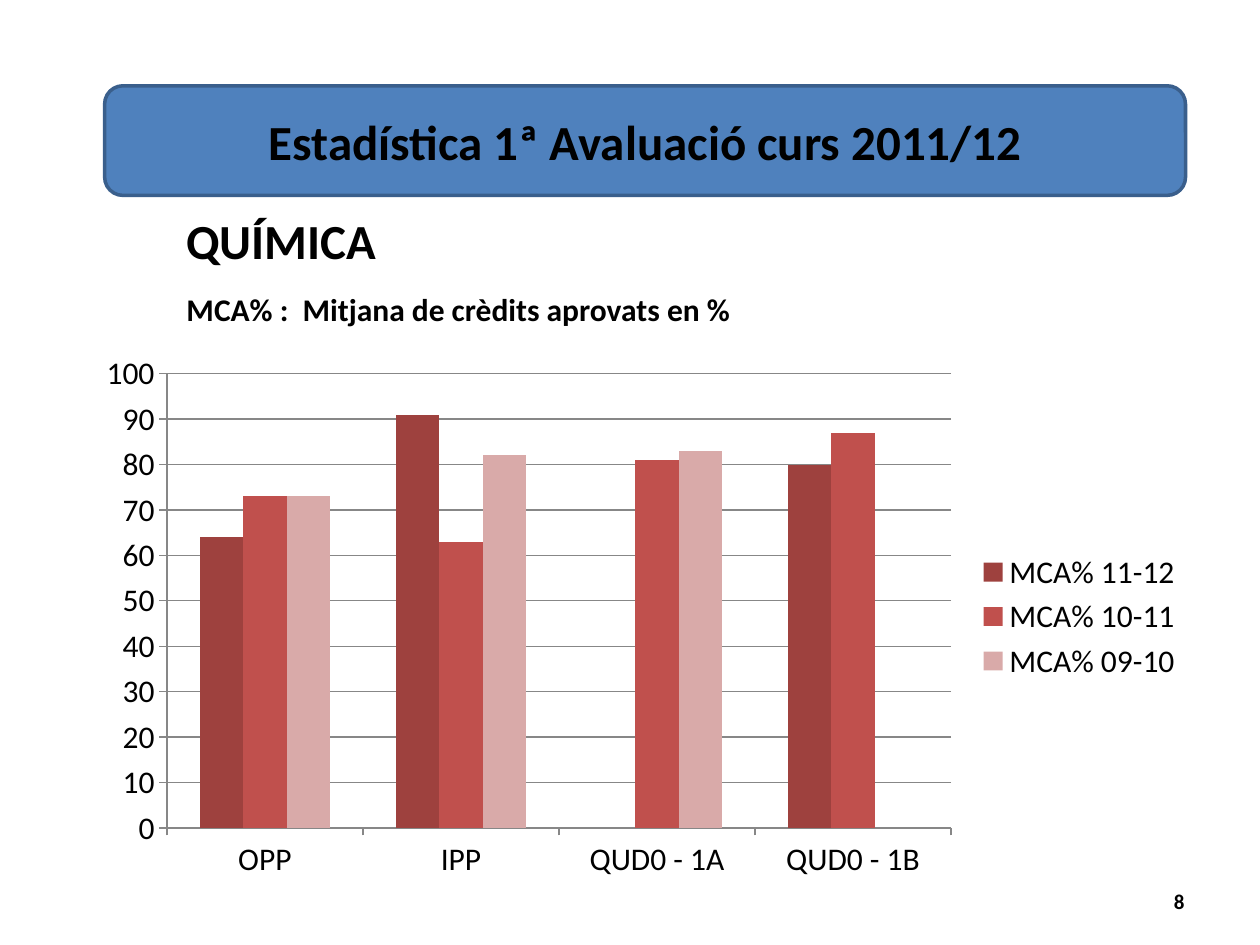
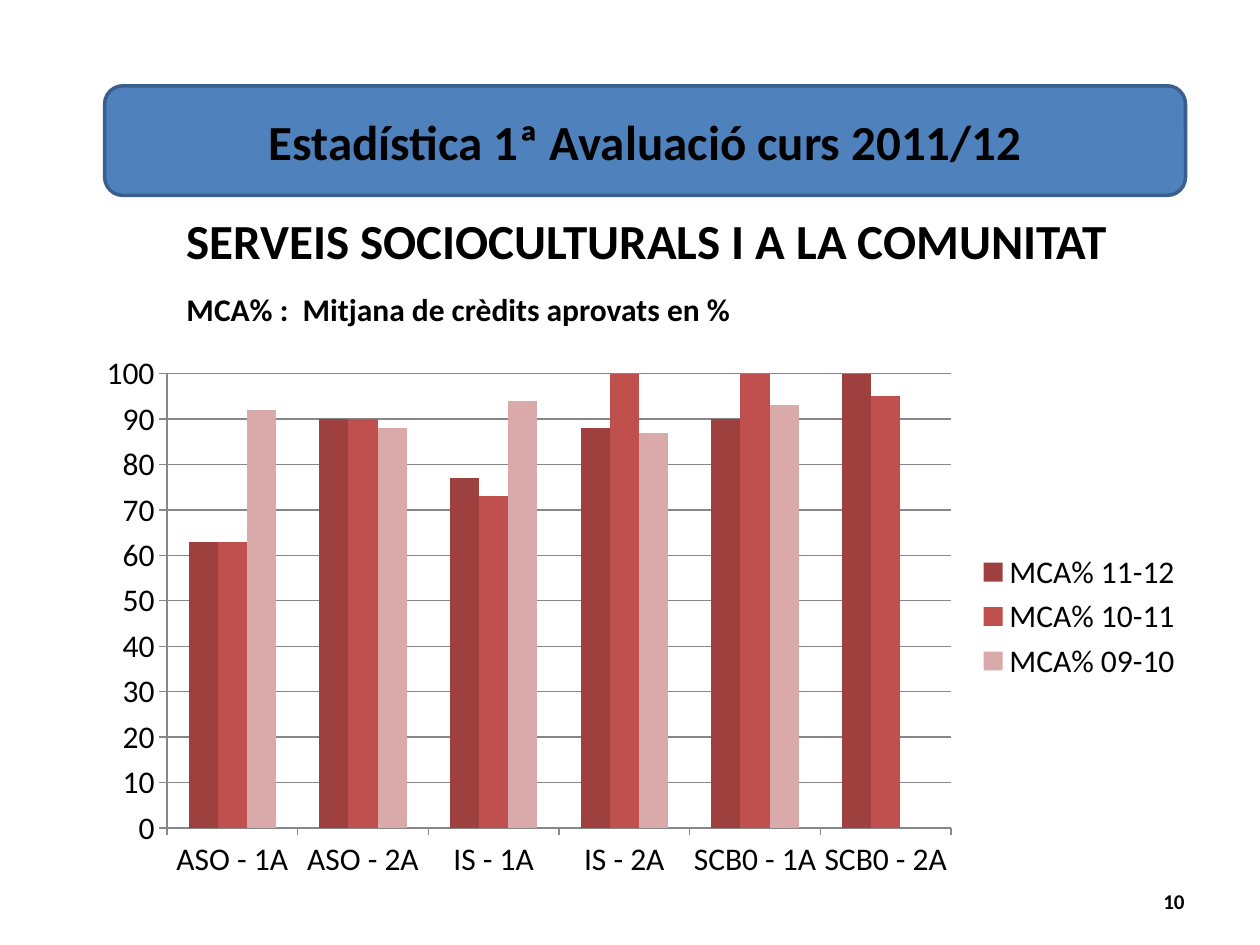
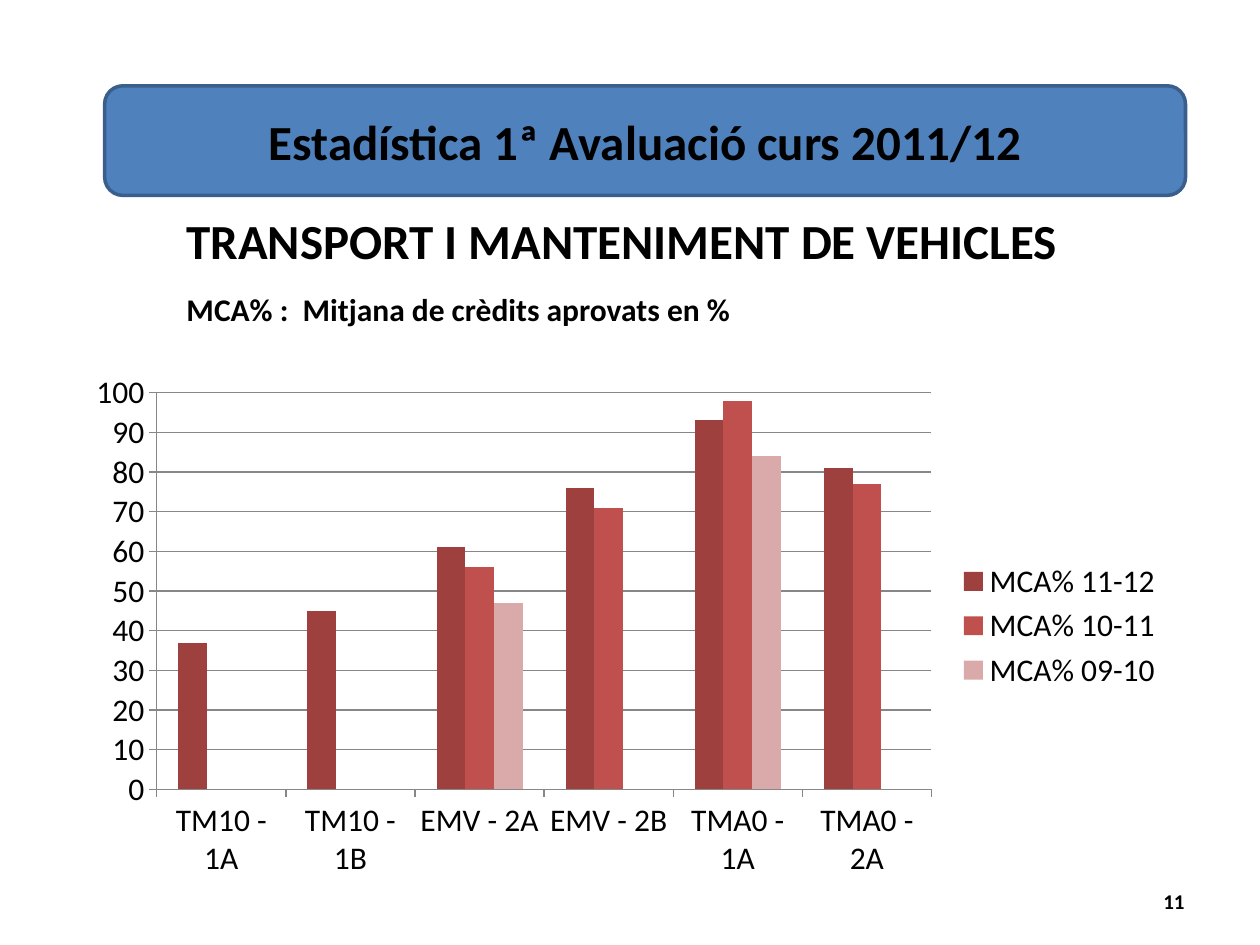
from dataclasses import dataclass

from pptx import Presentation
from pptx.chart.data import CategoryChartData
from pptx.dml.color import RGBColor
from pptx.enum.chart import XL_CHART_TYPE, XL_LEGEND_POSITION, XL_TICK_MARK
from pptx.enum.shapes import MSO_SHAPE
from pptx.enum.text import MSO_ANCHOR, MSO_AUTO_SIZE, PP_ALIGN
from pptx.util import Cm, Pt


@dataclass(frozen=True)
class Theme:
    font: str = "Calibri"
    ink: str = "000000"
    band: str = "4F81BD"
    edge: str = "3A5F8C"
    grid: str = "878787"
    bars: tuple = ("9E413E", "C0504D", "D9AAA9")
    head: int = 28
    body: int = 18
    foot: int = 12


THEME = Theme()
TITLE = "Estadística 1ª Avaluació curs 2011/12"
LABEL = "MCA% :  Mitjana de crèdits aprovats en %"
YEARS = ("MCA% 11-12", "MCA% 10-11", "MCA% 09-10")

# Chart places in cm: left, top, width, height
HIGH = (1.7, 6.93, 22.4, 11)
LOW = (1.5, 7.32, 22.2, 10.59)

# Page number, subject, its width in cm, chart place, values of each group by year
PAGES = (
    (8, "QUÍMICA", 4.39, HIGH, {
        "OPP": (64, 73, 73),
        "IPP": (91, 63, 82),
        "QUD0 - 1A": (None, 81, 83),
        "QUD0 - 1B": (80, 87, None),
    }),
    (10, "SERVEIS SOCIOCULTURALS I A LA COMUNITAT", 19.3, HIGH, {
        "ASO - 1A": (63, 63, 92),
        "ASO - 2A": (90, 90, 88),
        "IS - 1A": (77, 73, 94),
        "IS - 2A": (88, 100, 87),
        "SCB0 - 1A": (90, 100, 93),
        "SCB0 - 2A": (100, 95, None),
    }),
    (11, "TRANSPORT I MANTENIMENT DE VEHICLES", 18.26, LOW, {
        "TM10 - 1A": (37, None, None),
        "TM10 - 1B": (45, None, None),
        "EMV - 2A": (61, 56, 47),
        "EMV - 2B": (76, 71, None),
        "TMA0 - 1A": (93, 98, 84),
        "TMA0 - 2A": (81, 77, None),
    }),
)


def color(code):
    return RGBColor.from_string(code)


def style(font, size, bold=False):
    font.name = THEME.font
    font.size = Pt(size)
    font.bold = bold
    font.color.rgb = color(THEME.ink)


def write(shape, text, size=THEME.body, align=PP_ALIGN.LEFT,
          anchor=MSO_ANCHOR.TOP, wrap=True, grow=False):
    """Put one bold line of text into a shape."""
    frame = shape.text_frame
    frame.word_wrap = wrap
    frame.vertical_anchor = anchor
    if grow:
        frame.auto_size = MSO_AUTO_SIZE.SHAPE_TO_FIT_TEXT
    line = frame.paragraphs[0]
    line.alignment = align
    run = line.add_run()
    run.text = text
    style(run.font, size, bold=True)


class Deck:
    def __init__(self, theme):
        self.theme = theme
        self.file = Presentation()
        self.file.slide_width = Cm(25.4)
        self.file.slide_height = Cm(19.05)
        self.slide = None

    def page(self):
        self.slide = self.file.slides.add_slide(self.file.slide_layouts[6])

    def text(self, place, text, **form):
        box = self.slide.shapes.add_textbox(*map(Cm, place))
        write(box, text, **form)

    def band(self, place, text):
        band = self.slide.shapes.add_shape(
            MSO_SHAPE.ROUNDED_RECTANGLE, *map(Cm, place))
        band.shadow.inherit = False
        band.fill.solid()
        band.fill.fore_color.rgb = color(self.theme.band)
        band.line.color.rgb = color(self.theme.edge)
        band.line.width = Pt(2)
        write(band, text, size=self.theme.head, align=PP_ALIGN.CENTER,
              anchor=MSO_ANCHOR.MIDDLE)

    def chart(self, place, groups):
        data = CategoryChartData()
        data.categories = list(groups)
        for year, vals in zip(YEARS, zip(*groups.values())):
            data.add_series(year, vals)
        chart = self.slide.shapes.add_chart(
            XL_CHART_TYPE.COLUMN_CLUSTERED, *map(Cm, place), data).chart
        style(chart.font, self.theme.body)
        chart.has_title = False

        # Bars
        plot = chart.plots[0]
        plot.gap_width = 150
        plot.overlap = 0
        plot.vary_by_categories = False
        for bars, code in zip(plot.series, self.theme.bars):
            bars.format.fill.solid()
            bars.format.fill.fore_color.rgb = color(code)

        # Axes and grid
        scale = chart.value_axis
        scale.minimum_scale = 0
        scale.maximum_scale = 100
        scale.major_unit = 10
        scale.has_major_gridlines = True
        for axis in (scale, chart.category_axis):
            axis.major_tick_mark = XL_TICK_MARK.OUTSIDE
            axis.minor_tick_mark = XL_TICK_MARK.NONE
        for part in (scale, chart.category_axis, scale.major_gridlines):
            part.format.line.color.rgb = color(self.theme.grid)
            part.format.line.width = Pt(0.75)

        # Legend
        chart.has_legend = True
        chart.legend.position = XL_LEGEND_POSITION.RIGHT
        chart.legend.include_in_layout = False


def main():
    deck = Deck(THEME)
    for number, subject, width, place, groups in PAGES:
        deck.page()
        # Headings
        deck.text((3.51, 5.72, 11.58, 1.02), LABEL, wrap=False, grow=True)
        deck.text((3.51, 4.11, width, 1.45), subject, size=THEME.head,
                  wrap=False, grow=True)
        # Footer and title band
        deck.text((18.21, 17.65, 5.92, 1.02), str(number), size=THEME.foot,
                  align=PP_ALIGN.RIGHT, anchor=MSO_ANCHOR.MIDDLE)
        deck.band((2.11, 1.73, 21.79, 2.21), TITLE)
        # Results
        deck.chart(place, groups)
    deck.file.save("out.pptx")


if __name__ == "__main__":
    main()
